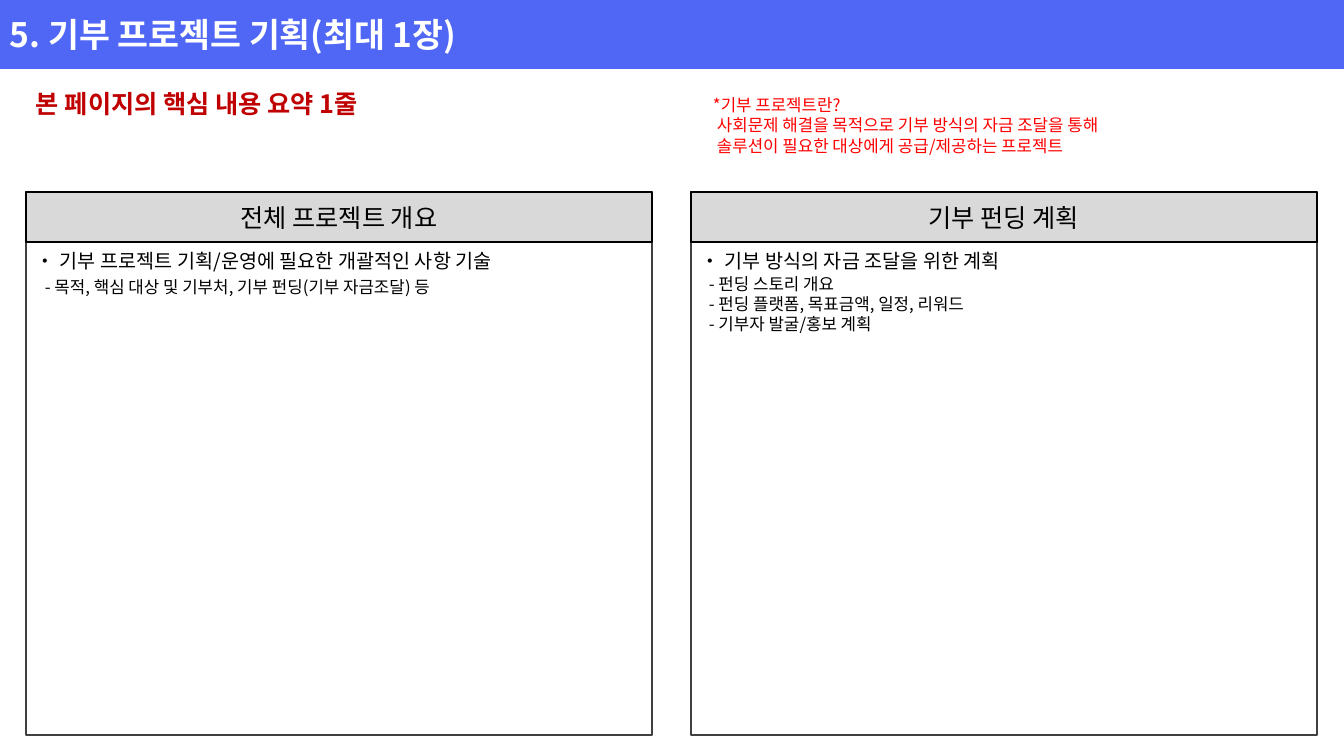
from pptx import Presentation
from pptx.dml.color import RGBColor
from pptx.enum.shapes import MSO_SHAPE as Shape
from pptx.enum.text import MSO_ANCHOR as Anchor, MSO_AUTO_SIZE as AutoSize, PP_ALIGN as Align
from pptx.oxml.ns import qn
from pptx.util import Emu, Pt
from lxml import etree

WHITE = RGBColor(0xFF, 0xFF, 0xFF)
BLACK = RGBColor(0x00, 0x00, 0x00)
BLUE = RGBColor(0x50, 0x67, 0xF5)
DARK_RED = RGBColor(0xC0, 0x00, 0x00)
RED = RGBColor(0xFF, 0x00, 0x00)
GREY = RGBColor(0xD9, 0xD9, 0xD9)
CHARCOAL = RGBColor(0x40, 0x40, 0x40)


def px(length):
    return Emu(round(length * 914400 / 100.8))


class SlideBuilder:
    font = "Noto Sans CJK KR"
    leading = 1.2

    def __init__(self, slide):
        self.slide = slide

    def box(self, left, top, width, height, fill=None, line=None):
        shape = self.slide.shapes.add_shape(
            Shape.RECTANGLE, px(left), px(top), px(width), px(height))
        shape.shadow.inherit = False
        if fill is None:
            shape.fill.background()
        else:
            shape.fill.solid()
            shape.fill.fore_color.rgb = fill
        if line is None:
            shape.line.fill.background()
        else:
            shape.line.color.rgb = line
            shape.line.width = Pt(1)
        return shape

    def text_box(self, left, top, width, height, anchor=Anchor.TOP):
        shape = self.slide.shapes.add_textbox(px(left), px(top), px(width), px(height))
        if anchor == Anchor.TOP:
            shape.text_frame.auto_size = AutoSize.SHAPE_TO_FIT_TEXT
        shape.text_frame.vertical_anchor = anchor
        return shape

    def add_text(self, shape, lines, color, align=Align.LEFT, bold=False, spacing=1):
        """Each line is (text, point size, indent in px, space before in points)."""
        frame = shape.text_frame
        frame.word_wrap = True
        for index, (text, size, indent, before) in enumerate(lines):
            paragraph = frame.add_paragraph() if index else frame.paragraphs[0]
            paragraph.alignment = align
            paragraph.line_spacing = Pt(round(size * self.leading * spacing, 1))
            paragraph.space_before = Pt(before)
            if indent:
                paragraph._p.get_or_add_pPr().set("marL", str(px(indent)))
            run = paragraph.add_run()
            run.text = text
            run.font.name = self.font
            run.font.size = Pt(size)
            run.font.bold = bold
            run.font.color.rgb = color
            # East Asian glyphs take their own typeface
            etree.SubElement(run.font._element, qn("a:ea"), typeface=self.font)


def main():
    presentation = Presentation()
    presentation.slide_width = px(1344)
    presentation.slide_height = px(756)
    builder = SlideBuilder(presentation.slides.add_slide(presentation.slide_layouts[6]))

    # Title band
    band = builder.box(0, 0, 1344, 69, fill=BLUE)
    builder.add_text(band, [("5. 기부 프로젝트 기획(최대 1장)", 24, 0, 0)], WHITE, bold=True)

    # Key message
    message = builder.text_box(26, 69, 1291, 54, Anchor.MIDDLE)
    builder.add_text(message, [("본 페이지의 핵심 내용 요약 1줄", 18, 0, 0)],
                     DARK_RED, bold=True, spacing=1.5)

    # Two panels with a header and guidance
    panels = [
        ("전체 프로젝트 개요", [
            ("• 기부 프로젝트 기획/운영에 필요한 개괄적인 사항 기술", 14, 0, 0),
            ("- 목적, 핵심 대상 및 기부처, 기부 펀딩(기부 자금조달) 등", 12, 9, 3),
        ]),
        ("기부 펀딩 계획", [
            ("• 기부 방식의 자금 조달을 위한 계획", 14, 0, 0),
            ("- 펀딩 스토리 개요", 12, 8, 1),
            ("- 펀딩 플랫폼, 목표금액, 일정, 리워드", 12, 8, 0),
            ("- 기부자 발굴/홍보 계획", 12, 8, 0),
        ]),
    ]
    panel_width, panel_gap = 626, 39
    for column, (heading, guidance) in enumerate(panels):
        left = 26 + column * (panel_width + panel_gap)
        builder.box(left, 192, panel_width, 543, line=CHARCOAL)
        body = builder.text_box(left, 244, panel_width, 20 + 19 * len(guidance))
        builder.add_text(body, guidance, BLACK, Align.JUSTIFY)
        header = builder.box(left, 192, panel_width, 50, fill=GREY, line=BLACK)
        builder.add_text(header, [(heading, 18, 0, 0)], BLACK, Align.CENTER)

    # Definition note
    note = builder.text_box(703, 90, 582, 71)
    builder.add_text(note, [
        ("*기부 프로젝트란?", 12, 0, 0),
        ("사회문제 해결을 목적으로 기부 방식의 자금 조달을 통해", 12, 4, 0),
        ("솔루션이 필요한 대상에게 공급/제공하는 프로젝트", 12, 4, 0),
    ], RED, Align.JUSTIFY)

    presentation.save("out.pptx")


if __name__ == "__main__":
    main()
